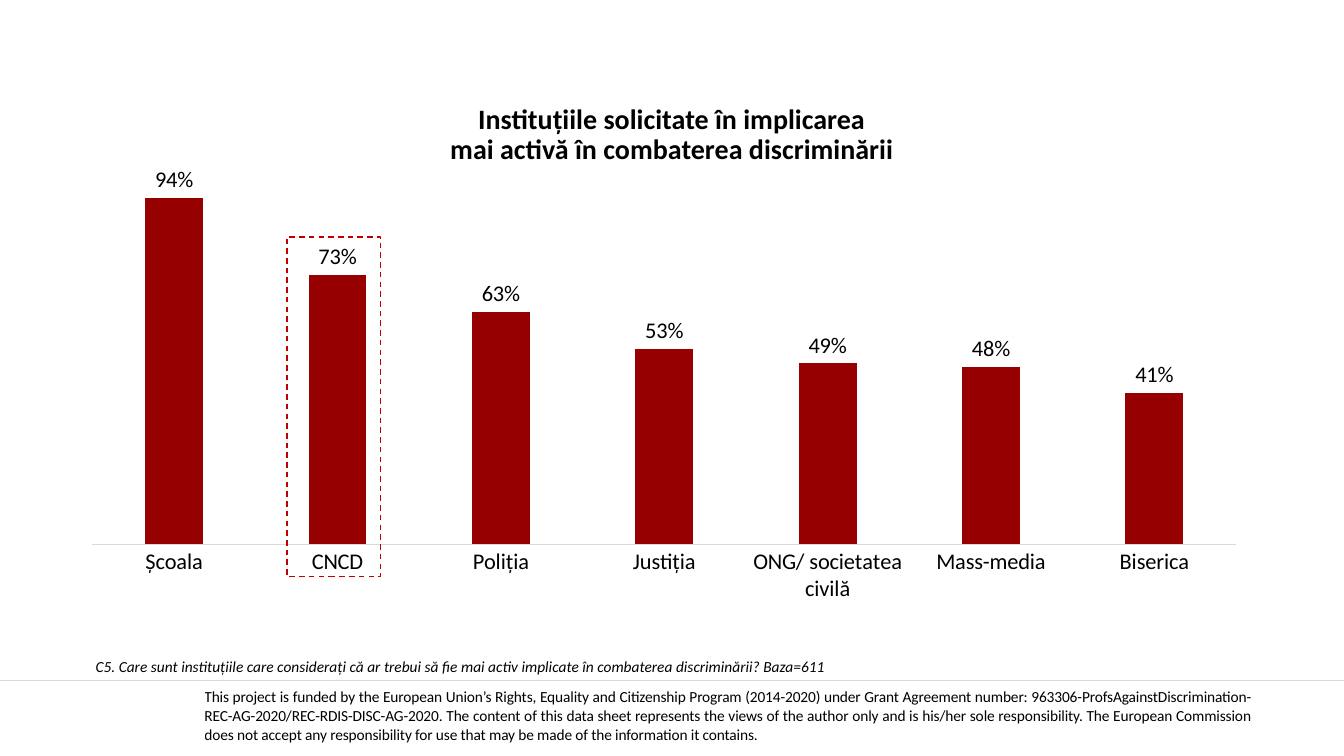
from lxml import etree
from pptx import Presentation
from pptx.chart.data import CategoryChartData
from pptx.dml.color import RGBColor
from pptx.enum.chart import XL_CHART_TYPE as ChartType, XL_LABEL_POSITION as LabelPosition, XL_TICK_MARK as TickMark
from pptx.enum.dml import MSO_LINE_DASH_STYLE as Dash
from pptx.enum.shapes import MSO_CONNECTOR as Connector, MSO_SHAPE as Shape
from pptx.enum.text import MSO_ANCHOR as Anchor, PP_ALIGN as Align
from pptx.oxml import parse_xml
from pptx.oxml.ns import nsdecls, qn
from pptx.util import Pt


def color(value):
    return RGBColor.from_string(value)


def set_font(font, **formats):
    """Apply black Calibri plus the given format values."""
    for name, value in {"name": "Calibri", **formats}.items():
        setattr(font, name, value)
    font.color.rgb = color("000000")


presentation = Presentation()
presentation.slide_width, presentation.slide_height = Pt(960), Pt(540)
slide = presentation.slides.add_slide(presentation.slide_layouts[6])
shapes = slide.shapes

# Funding notice
table = shapes.add_table(1, 1, Pt(146), Pt(474), Pt(748), Pt(75)).table
table.first_row = table.horz_banding = False
cell = table.cell(0, 0)
cell.fill.background()
cell.vertical_anchor = Anchor.MIDDLE
for side in ("left", "right", "top", "bottom"):
    setattr(cell, f"margin_{side}", 0)
paragraph = cell.text_frame.paragraphs[0]
paragraph.alignment = Align.JUSTIFY
run = paragraph.add_run()
run.text = (
    "This project is funded by the European Union’s Rights, Equality and Citizenship Program (2014-2020) "
    "under Grant Agreement number: 963306-ProfsAgainstDiscrimination-REC-AG-2020/REC-RDIS-DISC-AG-2020. "
    "The content of this data sheet represents the views of the author only and is his/her sole responsibility. "
    "The European Commission does not accept any responsibility for use that may be made of the information it contains."
)
set_font(run.font, size=Pt(11))
run.font._element.set("spc", "-10")

divider = shapes.add_connector(Connector.STRAIGHT, 0, Pt(486), Pt(960), Pt(486))
divider.line.color.rgb = color("D9D9D9")
divider.line.width = Pt(0.5)
etree.SubElement(divider._element.spPr, qn("a:effectLst"))

# Survey question
question = shapes.add_textbox(Pt(61.2), Pt(466), Pt(895), Pt(20.6)).text_frame
question.word_wrap = True
run = question.paragraphs[0].add_run()
run.text = (
    "C5. Care sunt instituțiile care considerați că ar trebui să fie mai activ implicate "
    "în combaterea discriminării? Baza=611"
)
set_font(run.font, size=Pt(11), italic=True)

# Column chart
institutions = {
    "Școala": 0.94,
    "CNCD": 0.73,
    "Poliția": 0.63,
    "Justiția": 0.53,
    "ONG/ societatea civilă": 0.49,
    "Mass-media": 0.48,
    "Biserica": 0.41,
}
data = CategoryChartData(number_format="###0%")
data.categories = list(institutions)
data.add_series("Series 1", list(institutions.values()))
chart = shapes.add_chart(ChartType.COLUMN_CLUSTERED, Pt(49), Pt(118.8), Pt(851), Pt(317.5), data).chart
chart.has_legend = chart.has_title = False
set_font(chart.font, size=Pt(10))

category_axis = chart.category_axis
category_axis.major_tick_mark = category_axis.minor_tick_mark = TickMark.NONE
category_axis.format.line.color.rgb = color("D9D9D9")
category_axis.format.line.width = Pt(0.75)
set_font(category_axis.tick_labels.font, size=Pt(16))

value_axis = chart.value_axis
value_axis.minimum_scale, value_axis.maximum_scale = 0, 1
value_axis.has_major_gridlines = False
value_axis.visible = False

plot = chart.plots[0]
plot.gap_width = 182
plot.vary_by_categories = False
series = plot.series[0]
series.format.fill.solid()
series.format.fill.fore_color.rgb = color("960000")
labels = series.data_labels
labels.show_value = True
labels.position = LabelPosition.OUTSIDE_END
labels.number_format = "###0%"
labels.number_format_is_linked = False
set_font(labels.font, size=Pt(16))

plot_area = chart._chartSpace.chart.plotArea
for layout in plot_area.findall(qn("c:layout")):
    plot_area.remove(layout)
placement = {"x": 0.02, "y": 0.02, "w": 0.96, "h": 0.83}
values = "".join(f'<c:{name} val="{value}"/>' for name, value in placement.items())
plot_area.insert(0, parse_xml(
    f'<c:layout {nsdecls("c")}><c:manualLayout><c:layoutTarget val="inner"/>'
    f'<c:xMode val="edge"/><c:yMode val="edge"/>{values}</c:manualLayout></c:layout>'
))

# Title
title = shapes.add_textbox(Pt(220.3), Pt(65.5), Pt(519), Pt(62.6)).text_frame
title.word_wrap = True
title.vertical_anchor = Anchor.MIDDLE
title.text = "Instituțiile solicitate în implicarea\nmai activă în combaterea discriminării"
for paragraph in title.paragraphs:
    paragraph.alignment = Align.CENTER
    paragraph.line_spacing = 0.9
    set_font(paragraph.runs[0].font, size=Pt(20), bold=True)

# Frame around the CNCD column
highlight = shapes.add_shape(Shape.RECTANGLE, Pt(205), Pt(169.2), Pt(67), Pt(242.6))
highlight.shadow.inherit = False
highlight.fill.background()
highlight.line.color.rgb = color("C00000")
highlight.line.width = Pt(1)
highlight.line.dash_style = Dash.DASH

presentation.save("out.pptx")
